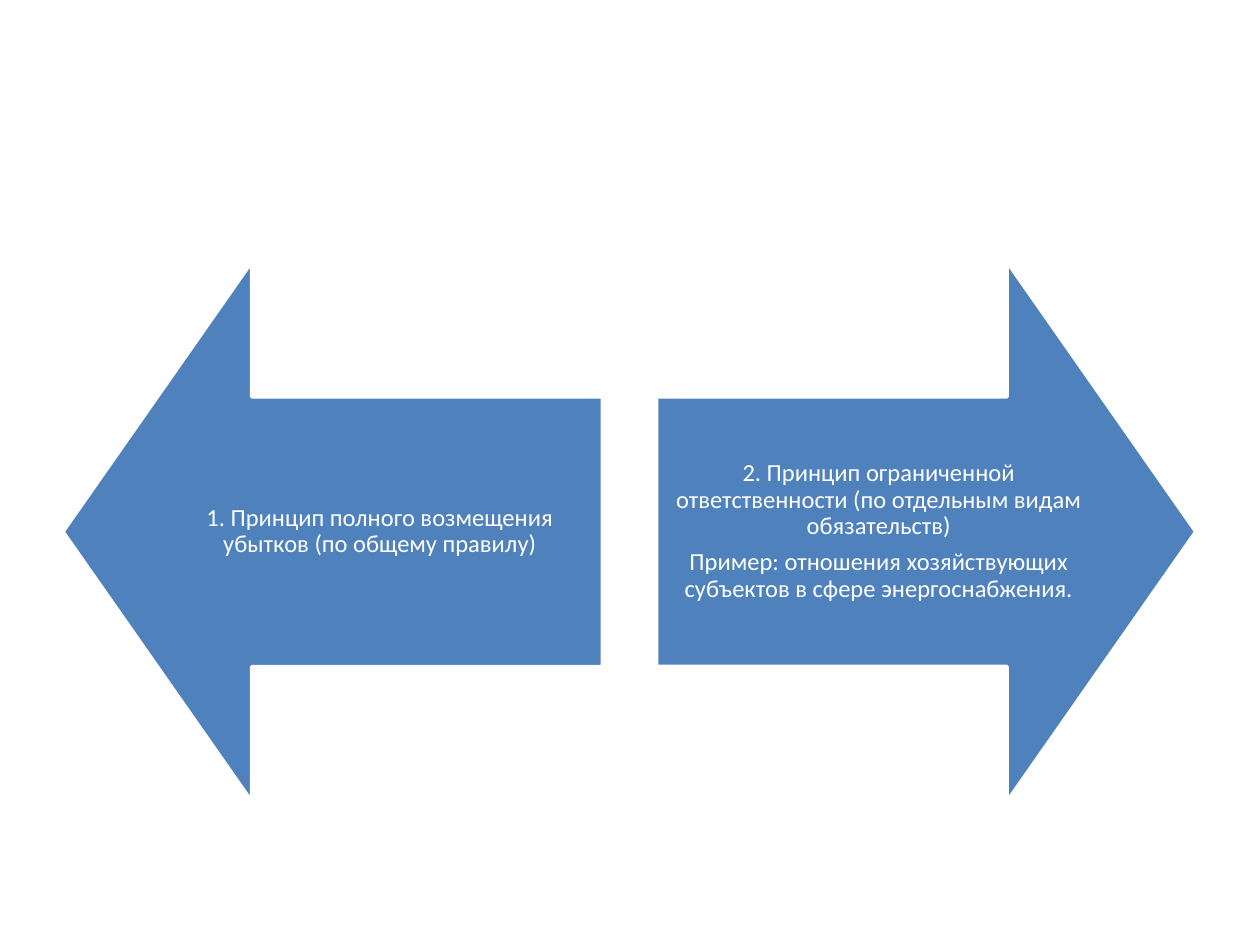
import pptx
import pptx.dml.color
import pptx.enum.shapes
import pptx.enum.text
import pptx.util

Inches = pptx.util.Inches
Pt = pptx.util.Pt
BLUE = pptx.dml.color.RGBColor(0x4F, 0x81, 0xBD)
WHITE = pptx.dml.color.RGBColor(0xFF, 0xFF, 0xFF)

ARROW_SIZE = 4.28
ARROW_TOP = 2.08
LABEL_WIDTH = 3.53
LABEL_HEIGHT = ARROW_SIZE / 2
LABEL_TOP = ARROW_TOP + ARROW_SIZE / 4

FRAME_FORMAT = {
    "word_wrap": True,
    "vertical_anchor": pptx.enum.text.MSO_ANCHOR.MIDDLE,
    "margin_left": Inches(0.11),
    "margin_right": Inches(0.11),
    "margin_top": Inches(0.11),
    "margin_bottom": Inches(0.11),
}
PARA_FORMAT = {
    "alignment": pptx.enum.text.PP_ALIGN.CENTER,
    "line_spacing": 0.9,
    "space_after": Pt(5.4),
}
FONT_FORMAT = {"name": "Calibri", "size": Pt(14)}

PRINCIPLES = [
    (0.5, 270, 1.25, ["1. Принцип полного возмещения убытков (по общему правилу)"]),
    (5.21, 90, 5.21, [
        "2. Принцип ограниченной ответственности (по отдельным видам обязательств)",
        "Пример: отношения хозяйствующих субъектов в сфере энергоснабжения.",
    ]),
]


def apply_format(target, values):
    for name, value in values.items():
        setattr(target, name, value)


def add_arrow(page, left, rotation):
    arrow = page.shapes.add_shape(
        pptx.enum.shapes.MSO_SHAPE.UP_ARROW,
        Inches(left), Inches(ARROW_TOP), Inches(ARROW_SIZE), Inches(ARROW_SIZE),
    )
    arrow.rotation = rotation
    arrow.adjustments[0] = 0.5
    arrow.adjustments[1] = 0.35
    arrow.shadow.inherit = False
    arrow.fill.solid()
    arrow.fill.fore_color.rgb = BLUE
    arrow.line.color.rgb = WHITE
    arrow.line.width = Pt(2)


def add_label(page, left, texts):
    box = page.shapes.add_textbox(
        Inches(left), Inches(LABEL_TOP), Inches(LABEL_WIDTH), Inches(LABEL_HEIGHT)
    )
    frame = box.text_frame
    apply_format(frame, FRAME_FORMAT)
    for index, text in enumerate(texts):
        para = frame.add_paragraph() if index else frame.paragraphs[0]
        apply_format(para, PARA_FORMAT)
        span = para.add_run()
        span.text = text
        apply_format(span.font, FONT_FORMAT)
        span.font.color.rgb = WHITE


def main():
    deck = pptx.Presentation()
    deck.slide_width = Inches(10)
    deck.slide_height = Inches(7.5)
    page = deck.slides.add_slide(deck.slide_layouts[6])
    for arrow_left, rotation, label_left, texts in PRINCIPLES:
        add_arrow(page, arrow_left, rotation)
        add_label(page, label_left, texts)
    deck.save("out.pptx")


if __name__ == "__main__":
    main()
